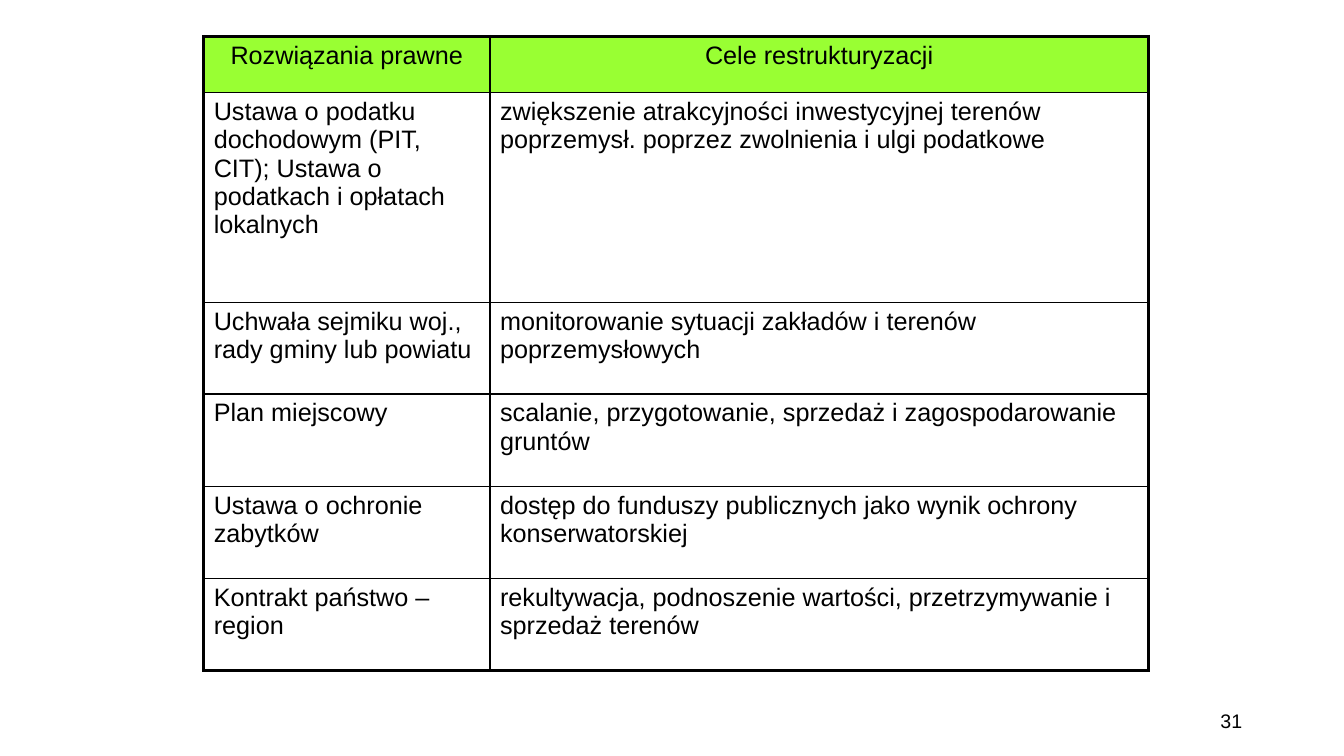
from lxml.etree import SubElement
from pptx import Presentation
from pptx.dml.color import RGBColor
from pptx.enum.text import MSO_ANCHOR, PP_ALIGN
from pptx.oxml.ns import qn
from pptx.util import Inches, Pt

BLACK = RGBColor(0x00, 0x00, 0x00)
WHITE = RGBColor(0xFF, 0xFF, 0xFF)
LIME = RGBColor(0x99, 0xFF, 0x33)
FONT = "Arial"
OUTER, INNER = Pt(2.25), Pt(1)
COL_WIDTHS = [2.84, 6.53]
ROW_HEIGHTS = [0.56, 2.08, 0.91, 0.92, 0.91, 0.91]
ROWS = [
    ("Rozwiązania prawne", "Cele restrukturyzacji"),
    ("Ustawa o podatku dochodowym (PIT, CIT); Ustawa o podatkach i opłatach lokalnych",
     "zwiększenie atrakcyjności inwestycyjnej terenów poprzemysł. "
     "poprzez zwolnienia i ulgi podatkowe"),
    ("Uchwała sejmiku woj., rady gminy lub powiatu",
     "monitorowanie sytuacji zakładów i terenów poprzemysłowych"),
    ("Plan miejscowy",
     "scalanie, przygotowanie, sprzedaż i zagospodarowanie gruntów"),
    ("Ustawa o ochronie zabytków",
     "dostęp do funduszy publicznych jako wynik ochrony konserwatorskiej"),
    ("Kontrakt państwo – region",
     "rekultywacja, podnoszenie wartości, przetrzymywanie i sprzedaż terenów"),
]


def write_text(tf, text, size, align):
    """Fill a text frame with one formatted paragraph."""
    tf.text = text
    p = tf.paragraphs[0]
    p.alignment = align
    p.space_before = Pt(0)
    font = p.runs[0].font
    font.name, font.size = FONT, Pt(size)
    font.color.rgb = BLACK


def set_borders(cell, widths):
    """Draw black cell borders from a mapping of side to width."""
    tcPr = cell._tc.get_or_add_tcPr()
    for side in ("L", "R", "T", "B"):
        ln = SubElement(tcPr, qn(f"a:ln{side}"), w=str(int(widths[side])))
        fill = SubElement(ln, qn("a:solidFill"))
        SubElement(fill, qn("a:srgbClr"), val=str(BLACK))


def add_law_table(slide, left, top, width, height):
    """Place the table of legal solutions and restructuring goals."""
    last_row, last_col = len(ROWS) - 1, len(COL_WIDTHS) - 1
    table = slide.shapes.add_table(len(ROWS), len(COL_WIDTHS), Inches(left), Inches(top),
                                   Inches(width), Inches(height)).table
    table.first_row = table.horz_banding = False
    for column, col_width in zip(table.columns, COL_WIDTHS):
        column.width = Inches(col_width)
    for i, (texts, row_height) in enumerate(zip(ROWS, ROW_HEIGHTS)):
        table.rows[i].height = Inches(row_height)
        for j, text in enumerate(texts):
            cell = table.cell(i, j)
            write_text(cell.text_frame, text, 18, PP_ALIGN.LEFT if i else PP_ALIGN.CENTER)
            set_borders(cell, {
                "L": OUTER if j == 0 else INNER,
                "R": OUTER if j == last_col else INNER,
                "T": OUTER if i == 0 else INNER,
                "B": OUTER if i == last_row else INNER,
            })
            cell.fill.solid()
            cell.fill.fore_color.rgb = WHITE if i else LIME


def add_page_number(slide, left, top, width, height):
    """Place the right-aligned page number."""
    tf = slide.shapes.add_textbox(Inches(left), Inches(top), Inches(width),
                                  Inches(height)).text_frame
    tf.word_wrap = True
    tf.vertical_anchor = MSO_ANCHOR.MIDDLE
    write_text(tf, "31", 14, PP_ALIGN.RIGHT)


def main():
    """Build the slide and save it."""
    prs = Presentation()
    prs.slide_width, prs.slide_height = Inches(13.33), Inches(7.5)
    slide = prs.slides.add_slide(prs.slide_layouts[6])
    add_page_number(slide, 9.42, 6.95, 3, 0.4)
    add_law_table(slide, 2.02, 0.36, sum(COL_WIDTHS), sum(ROW_HEIGHTS))
    prs.save("out.pptx")


if __name__ == "__main__":
    main()
